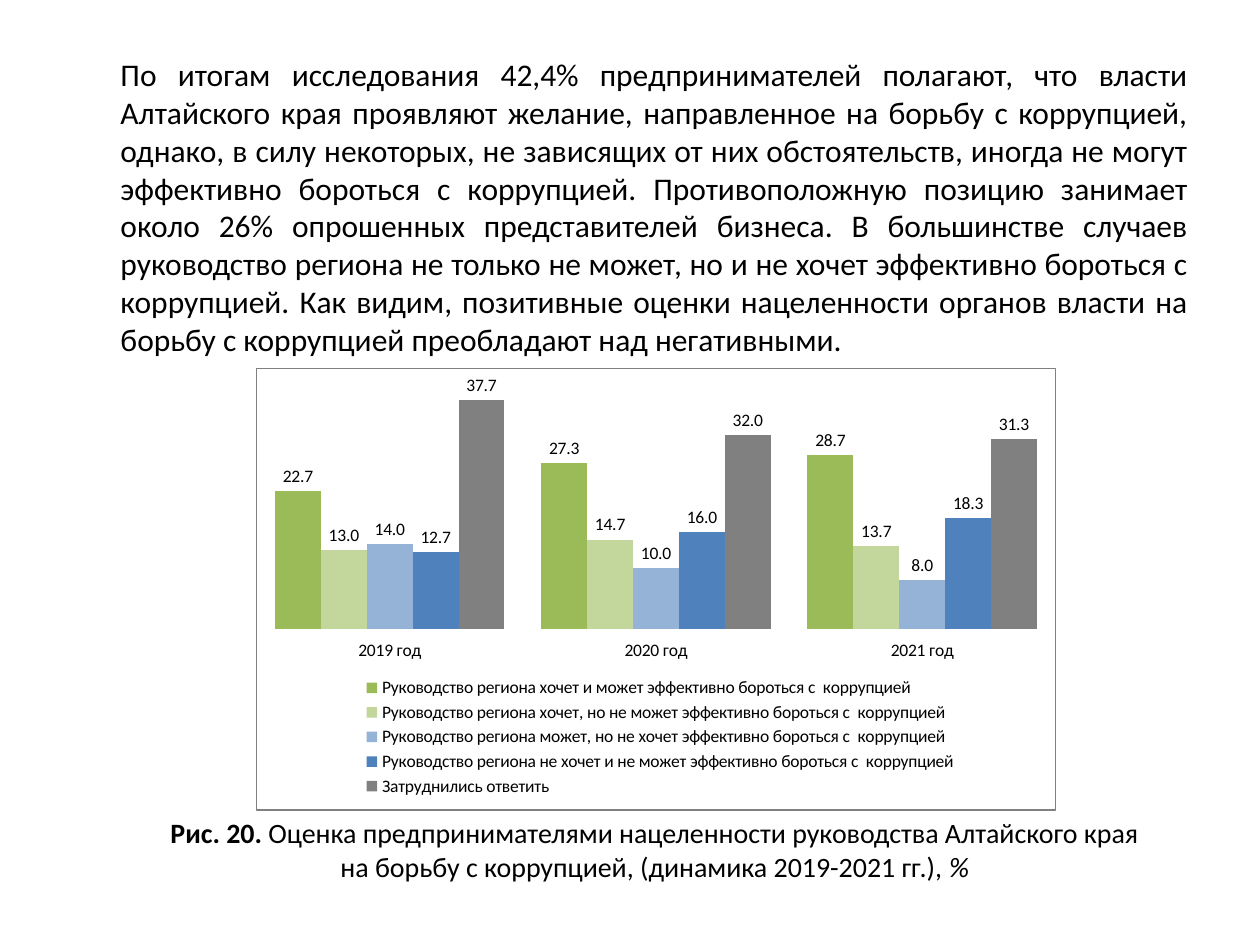
"""Build a slide with a paragraph, a clustered column chart and its caption."""
from dataclasses import dataclass

from lxml.etree import _Element
from pptx import Presentation
from pptx.chart.chart import Chart
from pptx.chart.data import CategoryChartData
from pptx.dml.color import RGBColor
from pptx.enum.chart import (XL_CHART_TYPE, XL_LABEL_POSITION, XL_LEGEND_POSITION,
                             XL_TICK_LABEL_POSITION, XL_TICK_MARK)
from pptx.enum.text import MSO_ANCHOR, MSO_AUTO_SIZE, PP_ALIGN
from pptx.oxml import parse_xml
from pptx.oxml.ns import nsdecls, qn
from pptx.slide import Slide
from pptx.text.text import Font
from pptx.util import Cm, Pt


@dataclass(frozen=True)
class Theme:
    font: str = "Calibri"
    text: str = "000000"
    background: str = "FFFFFF"
    border: str = "808080"
    body_size: int = 18
    caption_size: int = 16
    chart_size: int = 10


@dataclass(frozen=True)
class Box:
    left: float
    top: float
    width: float
    height: float

    def lengths(self) -> tuple[Cm, Cm, Cm, Cm]:
        return Cm(self.left), Cm(self.top), Cm(self.width), Cm(self.height)


@dataclass(frozen=True)
class TextRun:
    text: str
    bold: bool = False
    italic: bool = False


@dataclass(frozen=True)
class TextBlock:
    box: Box
    runs: tuple[TextRun, ...]
    size: int
    alignment: PP_ALIGN
    anchor: MSO_ANCHOR


@dataclass(frozen=True)
class Answer:
    name: str
    values: tuple[float, ...]
    color: str


THEME = Theme()
YEARS = ("2019 год", "2020 год", "2021 год")
CHART_BOX = Box(5.16, 7.42, 16.13, 8.92)
PLOT_LAYOUT = Box(0, 0.04, 1, 0.55)
LEGEND_LAYOUT = Box(0.13, 0.69, 0.75, 0.29)
ANSWERS = (
    Answer("Руководство региона хочет и может эффективно бороться с  коррупцией",
           (22.7, 27.3, 28.7), "9BBB59"),
    Answer("Руководство региона хочет, но не может эффективно бороться с  коррупцией",
           (13.0, 14.7, 13.7), "C3D69B"),
    Answer("Руководство региона может, но не хочет эффективно бороться с  коррупцией",
           (14.0, 10.0, 8.0), "95B3D7"),
    Answer("Руководство региона не хочет и не может эффективно бороться с  коррупцией",
           (12.7, 16.0, 18.3), "4F81BD"),
    Answer("Затруднились ответить", (37.7, 32.0, 31.3), "808080"),
)
BODY = TextBlock(
    Box(2.18, 0.99, 22.02, 6.4),
    (TextRun(
        "По итогам исследования 42,4% предпринимателей полагают, что власти Алтайского края "
        "проявляют желание, направленное на борьбу с коррупцией, однако, в силу некоторых, "
        "не зависящих от них обстоятельств, иногда не могут эффективно бороться с коррупцией. "
        "Противоположную позицию занимает около 26% опрошенных представителей бизнеса. "
        "В большинстве случаев руководство региона не только не может, но и не хочет эффективно "
        "бороться с коррупцией. Как видим, позитивные оценки нацеленности органов власти "
        "на борьбу с коррупцией преобладают над негативными."),),
    THEME.body_size, PP_ALIGN.JUSTIFY, MSO_ANCHOR.TOP)
CAPTION = TextBlock(
    Box(3.18, 16.31, 20.04, 1.63),
    (TextRun("Рис. 20. ", bold=True),
     TextRun("Оценка предпринимателями нацеленности руководства Алтайского края "
             "на борьбу с коррупцией, (динамика 2019-2021 гг.), "),
     TextRun("%", italic=True)),
    THEME.caption_size, PP_ALIGN.CENTER, MSO_ANCHOR.MIDDLE)


def apply_format(target: object, values: dict[str, object]) -> None:
    for name, value in values.items():
        setattr(target, name, value)


def style_font(font: Font, size: int, bold: bool = False, italic: bool = False) -> None:
    apply_format(font, {"name": THEME.font, "size": Pt(size), "bold": bold, "italic": italic})
    font.color.rgb = RGBColor.from_string(THEME.text)


def add_text(slide: Slide, block: TextBlock) -> None:
    shape = slide.shapes.add_textbox(*block.box.lengths())
    apply_format(shape.text_frame, {"word_wrap": True, "vertical_anchor": block.anchor,
                                    "auto_size": MSO_AUTO_SIZE.SHAPE_TO_FIT_TEXT})
    paragraph = shape.text_frame.paragraphs[0]
    paragraph.alignment = block.alignment
    for text_run in block.runs:
        run = paragraph.add_run()
        run.text = text_run.text
        style_font(run.font, block.size, text_run.bold, text_run.italic)


def layout_element(layout: Box, target: str = "") -> _Element:
    return parse_xml(
        f'<c:layout {nsdecls("c")}><c:manualLayout>{target}'
        '<c:xMode val="edge"/><c:yMode val="edge"/>'
        f'<c:x val="{layout.left}"/><c:y val="{layout.top}"/>'
        f'<c:w val="{layout.width}"/><c:h val="{layout.height}"/>'
        '</c:manualLayout></c:layout>')


def frame_chart(chart: Chart) -> None:
    chart_space = chart.element
    chart_space.find(qn("c:chart")).addnext(parse_xml(
        f'<c:spPr {nsdecls("c", "a")}>'
        f'<a:solidFill><a:srgbClr val="{THEME.background}"/></a:solidFill>'
        f'<a:ln w="{Pt(0.75)}"><a:solidFill><a:srgbClr val="{THEME.border}"/></a:solidFill></a:ln>'
        '</c:spPr>'))
    plot_area = chart_space.find(".//" + qn("c:plotArea"))
    legend = chart_space.find(".//" + qn("c:legend"))
    for old_layout in plot_area.findall(qn("c:layout")) + legend.findall(qn("c:layout")):
        old_layout.getparent().remove(old_layout)
    plot_area.insert(0, layout_element(PLOT_LAYOUT, '<c:layoutTarget val="inner"/>'))
    legend.find(qn("c:legendPos")).addnext(layout_element(LEGEND_LAYOUT))


def add_answer_chart(slide: Slide) -> None:
    data = CategoryChartData(number_format="0.0")
    data.categories = YEARS
    for answer in ANSWERS:
        data.add_series(answer.name, answer.values)
    chart = slide.shapes.add_chart(
        XL_CHART_TYPE.COLUMN_CLUSTERED, *CHART_BOX.lengths(), data).chart
    apply_format(chart, {"has_title": False, "has_legend": True})
    apply_format(chart.legend, {"position": XL_LEGEND_POSITION.BOTTOM,
                                "include_in_layout": False})
    apply_format(chart.value_axis, {"visible": False, "has_major_gridlines": False,
                                    "minimum_scale": 0, "maximum_scale": 40})
    apply_format(chart.category_axis, {"major_tick_mark": XL_TICK_MARK.NONE,
                                       "tick_label_position": XL_TICK_LABEL_POSITION.LOW})
    chart.category_axis.format.line.fill.background()
    for font in (chart.font, chart.legend.font, chart.category_axis.tick_labels.font):
        style_font(font, THEME.chart_size)
    plot = chart.plots[0]
    apply_format(plot, {"gap_width": 80, "overlap": 0, "vary_by_categories": False})
    for series, answer in zip(plot.series, ANSWERS):
        series.format.fill.solid()
        series.format.fill.fore_color.rgb = RGBColor.from_string(answer.color)
        labels = series.data_labels
        apply_format(labels, {"show_value": True, "number_format": "0.0",
                              "number_format_is_linked": False,
                              "position": XL_LABEL_POSITION.OUTSIDE_END})
        style_font(labels.font, THEME.chart_size)
    frame_chart(chart)


def main() -> None:
    presentation = Presentation()
    apply_format(presentation, {"slide_width": Cm(25.4), "slide_height": Cm(19.05)})
    slide = presentation.slides.add_slide(presentation.slide_layouts[6])
    for block in (BODY, CAPTION):
        add_text(slide, block)
    add_answer_chart(slide)
    presentation.save("out.pptx")


if __name__ == "__main__":
    main()
